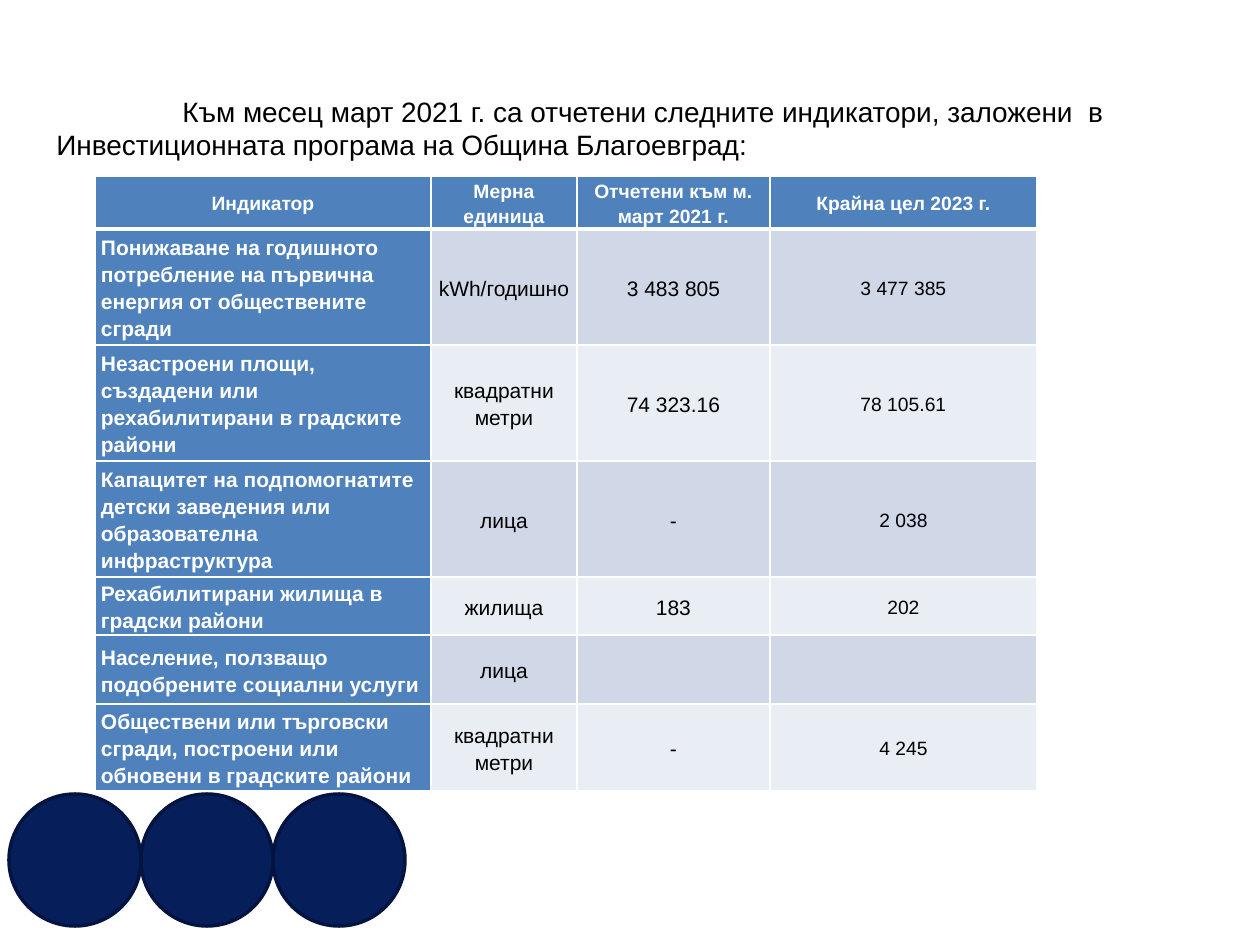
import pptx
import pptx.dml.color
import pptx.enum.shapes
import pptx.enum.text
import pptx.oxml.ns
import pptx.util
from lxml import etree

PX = 914400 // 126
COLORS = {
    "white": "FFFFFF",
    "black": "000000",
    "header": "4F81BD",
    "band_dark": "D0D8E8",
    "band_light": "E9EDF4",
    "circle": "061F5B",
    "circle_edge": "031441",
}
ALIGN = pptx.enum.text.PP_ALIGN
MIDDLE = pptx.enum.text.MSO_ANCHOR.MIDDLE

INTRO = "Към месец март 2021 г. са отчетени следните индикатори, заложени  в Инвестиционната програма на Община Благоевград:"
HEADINGS = ("Индикатор", "Мерна единица", "Отчетени към м. март 2021 г.", "Крайна цел 2023 г.")
INDICATORS = (
    ("Понижаване на годишното потребление на първична енергия от обществените сгради",
     "kWh/годишно", "3 483 805", "3 477 385"),
    ("Незастроени площи, създадени или рехабилитирани в градските райони",
     "квадратни метри", "74 323.16", "78 105.61"),
    ("Капацитет на подпомогнатите детски заведения или образователна инфраструктура",
     "лица", "-", "2 038"),
    ("Рехабилитирани жилища в градски райони", "жилища", "183", "202"),
    ("Население, ползващо подобрените социални услуги", "лица", "", ""),
    ("Обществени или търговски сгради, построени или обновени в градските райони",
     "квадратни метри", "-", "4 245"),
)
COLUMN_WIDTHS = (336, 146, 193, 267)
ROW_HEIGHTS = (52, 116, 116, 115, 58, 69, 86)


def px(length):
    return pptx.util.Emu(length * PX)


def rgb(name):
    return pptx.dml.color.RGBColor.from_string(COLORS[name])


def write_text(frame, text, size, color="black", bold=False, align=ALIGN.LEFT,
               spacing=1.0, indent=0):
    para = frame.paragraphs[0]
    para.alignment = align
    para.line_spacing = spacing
    if indent:
        para._p.get_or_add_pPr().set("indent", str(px(indent)))
    para.font.size = pptx.util.Pt(size)
    if not text:
        return
    span = para.add_run()
    span.text = text
    span.font.name = "Arial"
    span.font.size = pptx.util.Pt(size)
    span.font.bold = bold
    span.font.color.rgb = rgb(color)


class Page:
    def __init__(self, deck, font_size):
        self.page = deck.slides.add_slide(deck.slide_layouts[6])
        self.font_size = font_size

    def circle(self, left, top, width, height):
        shape = self.page.shapes.add_shape(
            pptx.enum.shapes.MSO_SHAPE.OVAL, px(left), px(top), px(width), px(height))
        shape.shadow.inherit = False
        shape.fill.solid()
        shape.fill.fore_color.rgb = rgb("circle")
        shape.line.color.rgb = rgb("circle_edge")
        shape.line.width = pptx.util.Pt(2)

    def text(self, left, top, width, height, text, **style):
        box = self.page.shapes.add_textbox(px(left), px(top), px(width), px(height))
        box.text_frame.word_wrap = True
        write_text(box.text_frame, text, **style)

    def border(self, cell, side, width):
        line = etree.SubElement(cell._tc.get_or_add_tcPr(), pptx.oxml.ns.qn("a:ln" + side),
                                w=str(pptx.util.Pt(width)))
        fill = etree.SubElement(line, pptx.oxml.ns.qn("a:solidFill"))
        etree.SubElement(fill, pptx.oxml.ns.qn("a:srgbClr"), val=COLORS["white"])

    def cell(self, cell, text, row, column):
        heading = row == 0
        label = heading or column == 0
        cell.margin_left = cell.margin_right = px(6)
        cell.margin_top = cell.margin_bottom = 0
        cell.vertical_anchor = MIDDLE
        for side in "LRTB":
            thick = (row, side) in ((0, "B"), (1, "T"))
            self.border(cell, side, 3 if thick else 1)
        cell.fill.solid()
        band = "band_dark" if row % 2 else "band_light"
        cell.fill.fore_color.rgb = rgb("header" if label else band)
        write_text(
            cell.text_frame, text,
            size=self.font_size - 1 if heading or column == 3 else self.font_size,
            color="white" if label else "black", bold=label, spacing=1.15,
            align=ALIGN.LEFT if column == 0 and not heading else ALIGN.CENTER)

    def table(self, left, top, widths, heights, rows):
        table = self.page.shapes.add_table(
            len(heights), len(widths), px(left), px(top), px(sum(widths)), px(sum(heights))).table
        for column, width in zip(table.columns, widths):
            column.width = px(width)
        for line, height in zip(table.rows, heights):
            line.height = px(height)
        for row, values in enumerate(rows):
            for column, value in enumerate(values):
                self.cell(table.cell(row, column), value, row, column)


def main():
    deck = pptx.Presentation()
    deck.slide_width = pptx.util.Inches(10)
    deck.slide_height = pptx.util.Inches(7.5)
    page = Page(deck, font_size=12)
    for index in range(3):
        page.circle(9 + index * 132, 794, 132, 132)
    page.text(44, 88, 1131, 80, INTRO, size=16, indent=126)
    page.table(95, 176, COLUMN_WIDTHS, ROW_HEIGHTS, (HEADINGS, *INDICATORS))
    deck.save("out.pptx")


if __name__ == "__main__":
    main()
